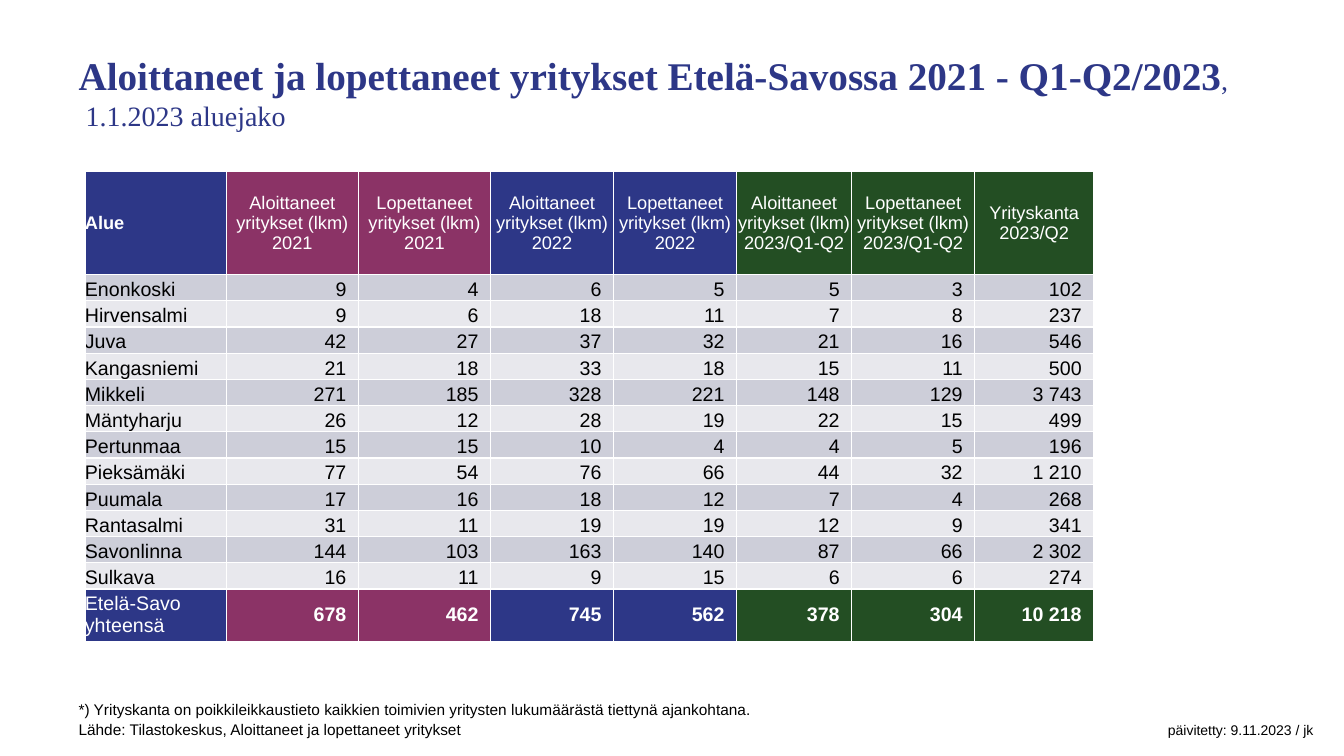
"""Build the slide on starting and closing businesses in Etelä-Savo."""

import dataclasses
import typing

import lxml.etree
import pptx
import pptx.dml.color
import pptx.enum.text
import pptx.oxml.ns
import pptx.util

Cm = pptx.util.Cm
Align = pptx.enum.text.PP_ALIGN
Anchor = pptx.enum.text.MSO_ANCHOR


@dataclasses.dataclass(frozen=True)
class Theme:
    navy: str = "2D3787"
    plum: str = "8B3366"
    green: str = "234E23"
    white: str = "FFFFFF"
    black: str = "000000"
    bands: tuple[str, str] = ("CDCED9", "E8E8ED")
    serif: str = "Times New Roman"
    sans: str = "Arial"
    title_size: float = 28
    subtitle_size: float = 20
    heading_size: float = 13
    body_size: float = 14
    note_size: float = 11
    date_size: float = 10
    border: float = 1


THEME = Theme()


@dataclasses.dataclass(frozen=True)
class Column:
    heading: str
    width: float
    fill: str


@dataclasses.dataclass(frozen=True)
class Region:
    name: str
    counts: tuple[int, ...]


@dataclasses.dataclass(frozen=True)
class CellStyle:
    fill: str
    color: str
    size: float
    bold: bool = False
    align: Align = Align.LEFT
    anchor: Anchor = Anchor.MIDDLE
    right_margin: float = 0


STARTED = "Aloittaneet yritykset (lkm)\n"
CLOSED = "Lopettaneet yritykset (lkm)\n"

COLUMNS = (
    Column("Alue", 3.56, THEME.navy),
    Column(STARTED + "2021", 3.33, THEME.plum),
    Column(CLOSED + "2021", 3.33, THEME.plum),
    Column(STARTED + "2022", 3.1, THEME.navy),
    Column(CLOSED + "2022", 3.1, THEME.navy),
    Column(STARTED + "2023/Q1-Q2", 2.9, THEME.green),
    Column(CLOSED + "2023/Q1-Q2", 3.1, THEME.green),
    Column("Yrityskanta\n2023/Q2", 3.0, THEME.green),
)

REGIONS = (
    Region("Enonkoski", (9, 4, 6, 5, 5, 3, 102)),
    Region("Hirvensalmi", (9, 6, 18, 11, 7, 8, 237)),
    Region("Juva", (42, 27, 37, 32, 21, 16, 546)),
    Region("Kangasniemi", (21, 18, 33, 18, 15, 11, 500)),
    Region("Mikkeli", (271, 185, 328, 221, 148, 129, 3743)),
    Region("Mäntyharju", (26, 12, 28, 19, 22, 15, 499)),
    Region("Pertunmaa", (15, 15, 10, 4, 4, 5, 196)),
    Region("Pieksämäki", (77, 54, 76, 66, 44, 32, 1210)),
    Region("Puumala", (17, 16, 18, 12, 7, 4, 268)),
    Region("Rantasalmi", (31, 11, 19, 19, 12, 9, 341)),
    Region("Savonlinna", (144, 103, 163, 140, 87, 66, 2302)),
    Region("Sulkava", (16, 11, 9, 15, 6, 6, 274)),
)
TOTAL = Region("Etelä-Savo yhteensä", tuple(map(sum, zip(*(region.counts for region in REGIONS)))))


def rgb(color: str) -> pptx.dml.color.RGBColor:
    return pptx.dml.color.RGBColor.from_string(color)


def style_font(font: typing.Any, name: str, size: float, color: str, bold: bool = False) -> None:
    font.name = name
    font.size = pptx.util.Pt(size)
    font.bold = bold
    font.color.rgb = rgb(color)


def add_box(page: typing.Any, left: float, top: float, width: float, height: float, anchor: Anchor) -> typing.Any:
    box = page.shapes.add_textbox(Cm(left), Cm(top), Cm(width), Cm(height))
    box.text_frame.word_wrap = True
    box.text_frame.vertical_anchor = anchor
    return box.text_frame


def add_title(page: typing.Any) -> None:
    para = add_box(page, 1.73, 1.12, 31.19, 2.39, Anchor.MIDDLE).paragraphs[0]
    para.text = "Aloittaneet ja lopettaneet yritykset Etelä-Savossa 2021 - Q1-Q2/2023"
    style_font(para.runs[0].font, THEME.serif, THEME.title_size, THEME.navy, True)
    para.add_run().text = ","
    para.add_line_break()
    para.add_run().text = " 1.1.2023 aluejako"
    for span in para.runs[1:]:
        style_font(span.font, THEME.serif, THEME.subtitle_size, THEME.navy)


def add_borders(cell: typing.Any) -> None:
    properties = cell._tc.get_or_add_tcPr()
    qn = pptx.oxml.ns.qn
    for side in ("a:lnL", "a:lnR", "a:lnT", "a:lnB"):
        line = lxml.etree.SubElement(properties, qn(side), w=str(pptx.util.Pt(THEME.border)))
        fill = lxml.etree.SubElement(line, qn("a:solidFill"))
        lxml.etree.SubElement(fill, qn("a:srgbClr"), val=THEME.white)


def fill_cell(cell: typing.Any, text: str, style: CellStyle) -> None:
    add_borders(cell)
    cell.fill.solid()
    cell.fill.fore_color.rgb = rgb(style.fill)
    cell.margin_left = cell.margin_top = cell.margin_bottom = 0
    cell.margin_right = Cm(style.right_margin)
    cell.vertical_anchor = style.anchor
    cell.text_frame.text = text
    for para in cell.text_frame.paragraphs:
        para.alignment = style.align
        for span in para.runs:
            style_font(span.font, THEME.sans, style.size, style.color, style.bold)


def fill_region(cells: typing.Any, region: Region, styles: list[CellStyle]) -> None:
    texts = [region.name, *(f"{count:,}".replace(",", " ") for count in region.counts)]
    for index, (cell, text, style) in enumerate(zip(cells, texts, styles)):
        if index:
            style = dataclasses.replace(style, align=Align.RIGHT, right_margin=0.3)
        fill_cell(cell, text, style)


def add_business_table(page: typing.Any) -> None:
    heights = [2.6] + [0.66] * len(REGIONS) + [1.32]
    width = sum(column.width for column in COLUMNS)
    frame = page.shapes.add_table(len(heights), len(COLUMNS), Cm(2.14), Cm(4.32), Cm(width), Cm(sum(heights)))
    table = frame.table
    table.first_row = table.horz_banding = False
    for row, height in zip(table.rows, heights):
        row.height = Cm(height)
    for index, column in enumerate(COLUMNS):
        table.columns[index].width = Cm(column.width)
        align = Align.CENTER if index else Align.LEFT
        style = CellStyle(column.fill, THEME.white, THEME.heading_size, index == 0, align)
        fill_cell(table.cell(0, index), column.heading, style)
    for index, region in enumerate(REGIONS):
        style = CellStyle(THEME.bands[index % 2], THEME.black, THEME.body_size, anchor=Anchor.BOTTOM)
        fill_region(table.rows[index + 1].cells, region, [style] * len(COLUMNS))
    totals = [CellStyle(column.fill, THEME.white, THEME.body_size, index > 0) for index, column in enumerate(COLUMNS)]
    fill_region(table.rows[len(heights) - 1].cells, TOTAL, totals)


def add_footnote(page: typing.Any) -> None:
    frame = add_box(page, 1.73, 17.53, 32, 1.52, Anchor.TOP)
    frame.text = (
        "*) Yrityskanta on poikkileikkaustieto kaikkien toimivien yritysten lukumäärästä tiettynä ajankohtana.\n"
        "Lähde: Tilastokeskus, Aloittaneet ja lopettaneet yritykset\t"
    )
    source = frame.paragraphs[1]
    stops = lxml.etree.SubElement(source._p.get_or_add_pPr(), pptx.oxml.ns.qn("a:tabLst"))
    lxml.etree.SubElement(stops, pptx.oxml.ns.qn("a:tab"), pos=str(Cm(31.12)), algn="r")
    source.space_before = pptx.util.Pt(1)
    for para in frame.paragraphs:
        style_font(para.runs[0].font, THEME.sans, THEME.note_size, THEME.black)
    date = source.add_run()
    date.text = "päivitetty: 9.11.2023 / jk"
    style_font(date.font, THEME.sans, THEME.date_size, THEME.black)


def main() -> None:
    deck = pptx.Presentation()
    deck.slide_width, deck.slide_height = Cm(33.87), Cm(19.05)
    page = deck.slides.add_slide(deck.slide_layouts[6])
    add_title(page)
    add_business_table(page)
    add_footnote(page)
    deck.save("out.pptx")


if __name__ == "__main__":
    main()
